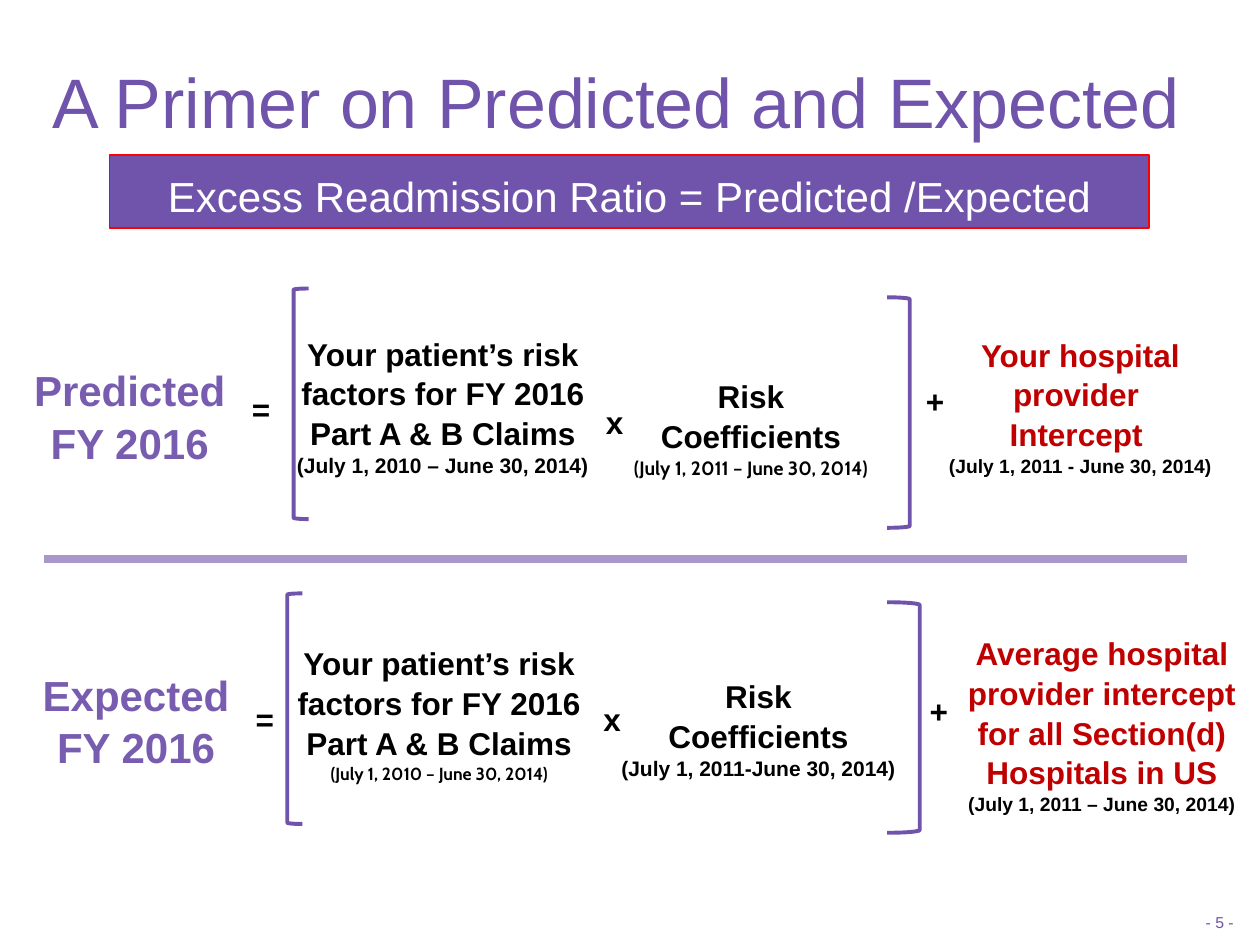
from pptx import Presentation, util as u
from pptx.dml.color import RGBColor
from pptx.enum import shapes, text
from pptx.oxml.ns import qn
from lxml import etree

COLORS = {"purple": "7053AA", "term": "775CAF", "rule": "A997CC", "red": "FF0000",
          "intercept": "C00000", "black": "000000", "white": "FFFFFF"}


def color(name):
    return RGBColor.from_string(COLORS[name])


def fill_text(frame, lines, align=text.PP_ALIGN.CENTER, inset=0.1, spacing=1.05):
    """Each line is (wording, size, colour, bold, font)."""
    frame.margin_left = frame.margin_right = u.Inches(inset)
    frame.margin_top = frame.margin_bottom = u.Inches(inset)
    frame.text = "\n".join(line[0] for line in lines)
    for paragraph, (_, size, tint, bold, font) in zip(frame.paragraphs, lines):
        paragraph.alignment = align
        paragraph.line_spacing = spacing
        for run in paragraph.runs:
            run.font.size = u.Pt(size)
            run.font.bold = bold
            run.font.name = font
            run.font.color.rgb = color(tint)


def add_text(slide, box, lines, wrap=False, anchor=text.MSO_ANCHOR.TOP, **style):
    frame = slide.shapes.add_textbox(*map(u.Inches, box)).text_frame
    frame.word_wrap = wrap
    frame.vertical_anchor = anchor
    fill_text(frame, lines, **style)


def add_title(slide, box):
    add_text(slide, box, [("A Primer on Predicted and Expected", 40, "purple", False, "Arial")],
             wrap=True, anchor=text.MSO_ANCHOR.MIDDLE, align=text.PP_ALIGN.LEFT, spacing=1)


def add_banner(slide, box):
    banner = slide.shapes.add_shape(shapes.MSO_SHAPE.RECTANGLE, *map(u.Inches, box))
    banner.shadow.inherit = False
    banner.fill.solid()
    banner.fill.fore_color.rgb = color("purple")
    banner.line.color.rgb = color("red")
    banner.line.width = u.Pt(0.75)
    banner.text_frame.vertical_anchor = text.MSO_ANCHOR.TOP
    fill_text(banner.text_frame,
              [("Excess Readmission Ratio = Predicted /Expected", 24, "white", False, "Arial")])


def add_bracket(slide, kind, box):
    bracket = slide.shapes.add_shape(kind, *map(u.Inches, box))
    bracket.shadow.inherit = False
    bracket.fill.background()
    bracket.line.color.rgb = color("purple")
    bracket.line.width = u.Pt(2.25)


def add_rule(slide, left, top, width):
    rule = slide.shapes.add_connector(
        shapes.MSO_CONNECTOR.STRAIGHT, u.Inches(left), u.Inches(top),
        u.Inches(left + width), u.Inches(top))
    rule.line.color.rgb = color("rule")
    rule.line.width = u.Pt(4.5)
    etree.SubElement(rule._element.spPr, qn("a:effectLst"))


def add_equation(slide, top, equation):
    """Places one equation; every box in it is measured down from top."""
    def place(box):
        left, offset, width, height = box
        return left, top + offset, width, height

    # Terms: heading lines with an optional period below
    for box, wording, size, tint, period in equation["terms"]:
        lines = [(line, size, tint, True, "Arial") for line in wording]
        if period:
            dates, dates_size, dates_font = period
            lines.append((dates, dates_size, "black", True, dates_font))
        add_text(slide, place(box), lines)

    # Operators
    for sign, left, offset in equation["operators"]:
        add_text(slide, place((left, offset, 0.35, 0.5)),
                 [(sign, 18, "black", True, "Arial")], align=text.PP_ALIGN.LEFT)

    # Brackets
    for kind, box in zip((shapes.MSO_SHAPE.LEFT_BRACKET, shapes.MSO_SHAPE.RIGHT_BRACKET),
                         equation["brackets"]):
        add_bracket(slide, kind, place(box))


RISK_FACTORS = ["Your patient’s risk", "factors for FY 2016", "Part A & B Claims"]
COEFFICIENTS = ["Risk", "Coefficients"]

PREDICTED = {
    "terms": [
        ((0.16, 0.52, 1.74, 1.01), ["Predicted", "FY 2016"], 24, "term", None),
        ((2.25, 0.29, 2.53, 1.31), RISK_FACTORS, 18, "black",
         ("(July 1, 2010 – June 30, 2014)", 12, "Arial")),
        ((4.79, 0.63, 2.34, 1.0), COEFFICIENTS, 18, "black",
         ("(July 1, 2011 – June 30, 2014)", 11, "Cabin")),
        ((7.42, 0.3, 2.31, 1.3), ["Your hospital", "provider ", "Intercept "], 18, "intercept",
         ("(July 1, 2011 - June 30, 2014)", 11, "Arial")),
    ],
    "operators": [("=", 1.9, 0.73), ("x", 4.71, 0.83), ("+", 7.25, 0.67)],
    "brackets": [(2.33, 0.04, 0.12, 1.83), (7.04, 0.11, 0.18, 1.83)],
}

EXPECTED = {
    "terms": [
        ((0.23, 0.57, 1.7, 1.01), ["Expected", "FY 2016"], 24, "term", None),
        ((2.25, 0.38, 2.47, 1.3), RISK_FACTORS, 18, "black",
         ("(July 1, 2010 – June 30, 2014)", 10, "Cabin")),
        ((4.79, 0.64, 2.46, 1.02), COEFFICIENTS, 18, "black",
         ("(July 1, 2011-June 30, 2014)", 12, "Arial")),
        ((7.57, 0.3, 2.35, 1.6),
         ["Average hospital", "provider intercept", "for all Section(d)", "Hospitals in US"],
         18, "intercept", ("(July 1, 2011 – June 30, 2014)", 11, "Arial")),
    ],
    "operators": [("=", 1.93, 0.82), ("x", 4.69, 0.82), ("+", 7.28, 0.76)],
    "brackets": [(2.28, 0.09, 0.12, 1.83), (7.04, 0.16, 0.26, 1.83)],
}


def main():
    deck = Presentation()
    deck.slide_width, deck.slide_height = u.Inches(10), u.Inches(7.5)
    slide = deck.slides.add_slide(deck.slide_layouts[6])

    add_title(slide, (0.32, 0.17, 9.34, 1.25))
    add_banner(slide, (0.87, 1.23, 8.25, 0.58))
    add_equation(slide, 2.25, PREDICTED)
    add_rule(slide, 0.35, 4.44, 9.07)
    add_equation(slide, 4.62, EXPECTED)

    # Page number
    add_text(slide, (9.39, 7.14, 0.58, 0.36), [("- 5 -", 9, "purple", False, "Arial")],
             wrap=True, anchor=text.MSO_ANCHOR.MIDDLE, inset=0.06, spacing=1)

    deck.save("out.pptx")


if __name__ == "__main__":
    main()
